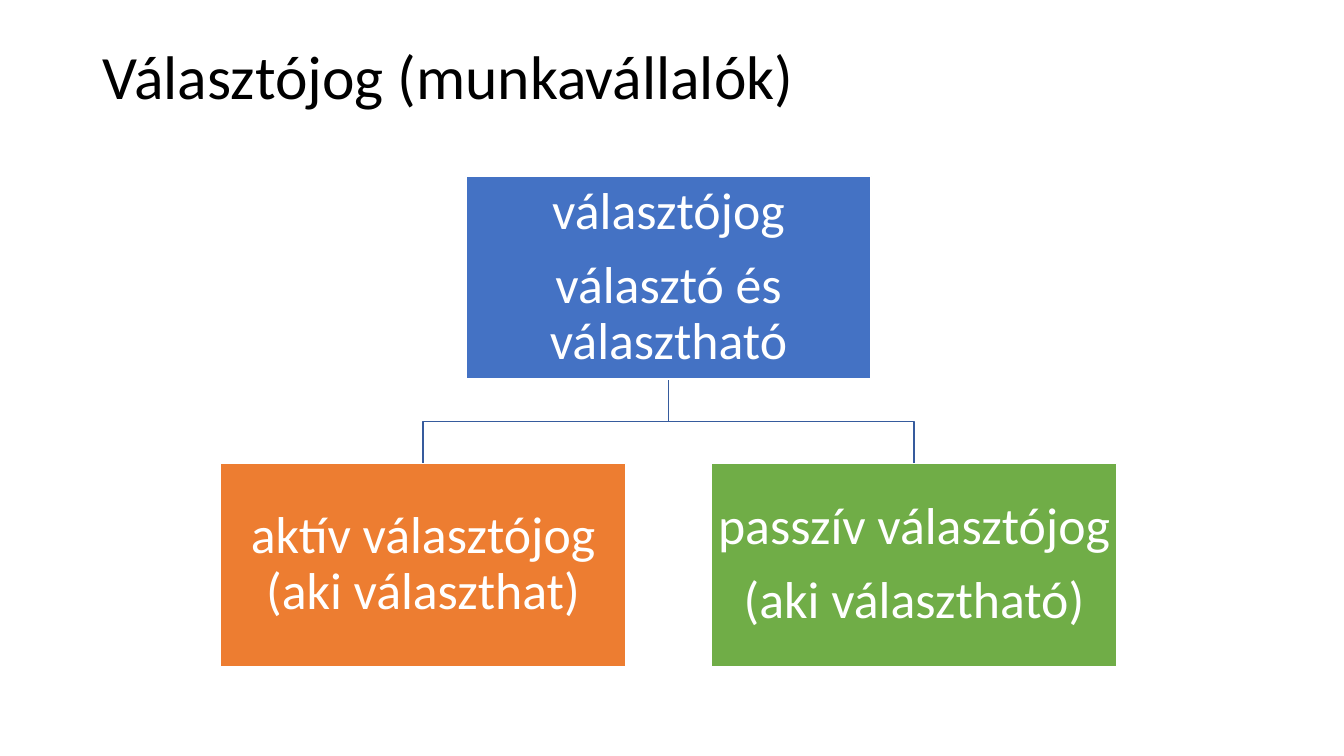
from pptx import Presentation
from pptx.dml.color import RGBColor
from pptx.enum.shapes import MSO_SHAPE as SHAPE
from pptx.enum.text import MSO_ANCHOR as ANCHOR, PP_ALIGN as ALIGN
from pptx.util import Inches, Pt

FONT = "Calibri"
BOX_W, BOX_H = 4.02, 2.01
ROOT_TOP, CHILD_TOP = 1.75, 4.6
ROOT_CENTER = 6.63
CHILD_OFFSET = 2.435


def rgb(color):
    return RGBColor.from_string(color)


def set_text(tf, lines, size, color, align, margin, space_after=0):
    tf.word_wrap = True
    tf.vertical_anchor = ANCHOR.MIDDLE
    tf.margin_left = tf.margin_right = Inches(margin)
    tf.margin_top = tf.margin_bottom = Inches(0.03)
    for i, line in enumerate(lines):
        p = tf.add_paragraph() if i else tf.paragraphs[0]
        p.text = line
        p.alignment = align
        p.line_spacing = 0.9
        p.space_after = Pt(space_after)
        p.font.name = FONT
        p.font.size = Pt(size)
        p.font.color.rgb = rgb(color)


def add_title(s, text):
    sp = s.shapes.add_textbox(Inches(0.92), Inches(0.27), Inches(11.5), Inches(1.04))
    set_text(sp.text_frame, [text], 44, "000000", ALIGN.LEFT, 0.1)


def add_box(s, center, top, fill, lines):
    sp = s.shapes.add_shape(SHAPE.RECTANGLE, Inches(center - BOX_W / 2), Inches(top),
                            Inches(BOX_W), Inches(BOX_H))
    sp.shadow.inherit = False
    sp.fill.solid()
    sp.fill.fore_color.rgb = rgb(fill)
    sp.line.color.rgb = rgb("FFFFFF")
    sp.line.width = Pt(1)
    set_text(sp.text_frame, lines, 37, "FFFFFF", ALIGN.CENTER, 0.03, space_after=13)


def add_branch(s, child_center):
    """Draw the angled line from the root box down to a child box."""
    start = ROOT_TOP + BOX_H
    middle = (start + CHILD_TOP) / 2
    points = [(ROOT_CENTER, middle), (child_center, middle), (child_center, CHILD_TOP)]
    builder = s.shapes.build_freeform(Inches(ROOT_CENTER), Inches(start))
    builder.add_line_segments([(Inches(x), Inches(y)) for x, y in points], close=False)
    sp = builder.convert_to_shape()
    sp.shadow.inherit = False
    sp.fill.background()
    sp.line.color.rgb = rgb("365B9D")
    sp.line.width = Pt(1)


def main():
    prs = Presentation()
    prs.slide_width, prs.slide_height = Inches(13.33), Inches(7.5)
    s = prs.slides.add_slide(prs.slide_layouts[6])

    add_title(s, "Választójog (munkavállalók)")
    children = [
        (ROOT_CENTER - CHILD_OFFSET, "ED7D31", ["aktív választójog (aki választhat)"]),
        (ROOT_CENTER + CHILD_OFFSET, "70AD47", ["passzív választójog", "(aki választható)"]),
    ]
    for center, _, _ in children:
        add_branch(s, center)
    add_box(s, ROOT_CENTER, ROOT_TOP, "4472C4", ["választójog", "választó és választható"])
    for center, fill, lines in children:
        add_box(s, center, CHILD_TOP, fill, lines)

    prs.save("out.pptx")


if __name__ == "__main__":
    main()
